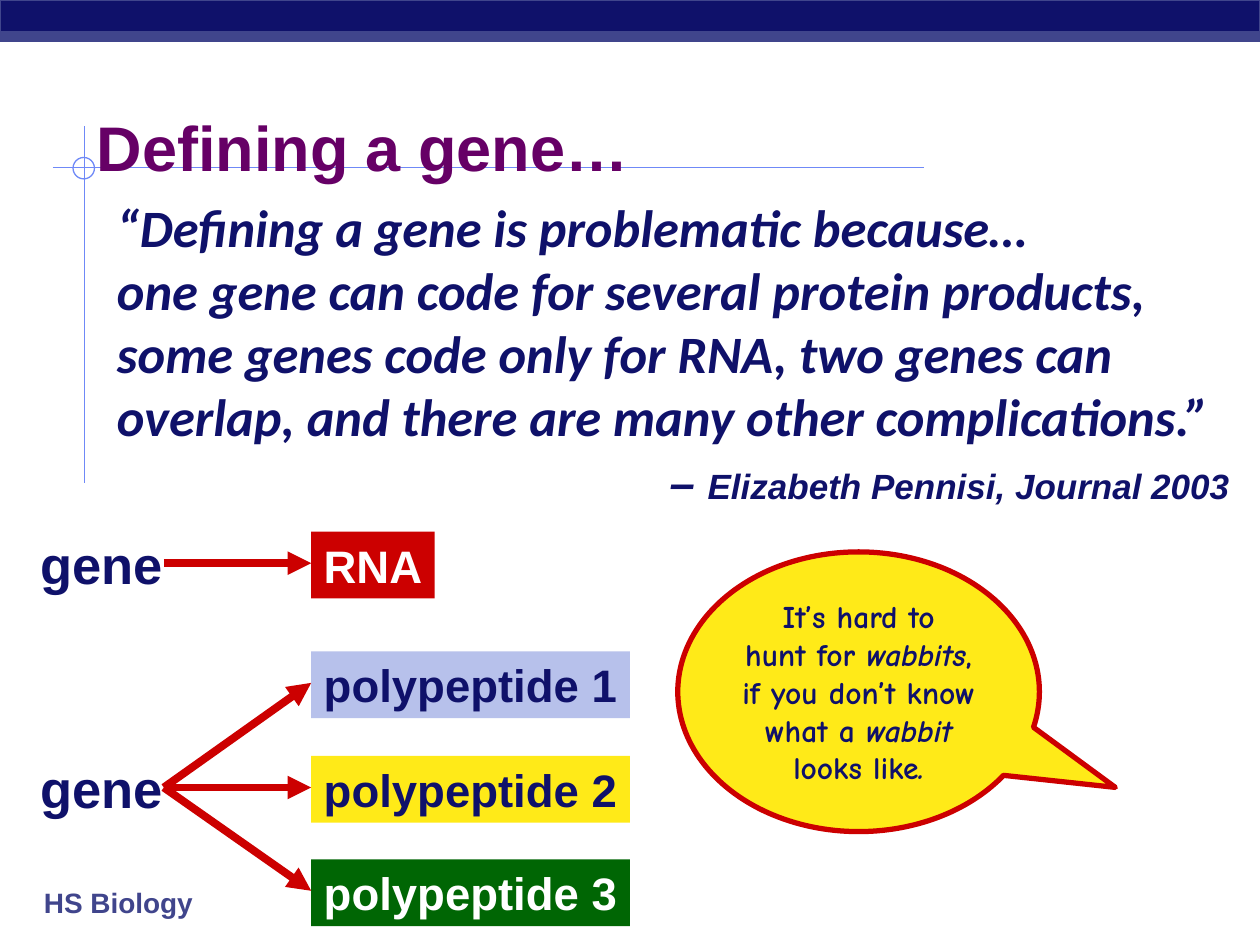
from dataclasses import dataclass
from typing import NamedTuple, Optional

import pptx
import pptx.dml.color
import pptx.enum.shapes
import pptx.enum.text
import pptx.oxml
import pptx.oxml.ns
import pptx.util

Inches = pptx.util.Inches
Pt = pptx.util.Pt
Shape = pptx.enum.shapes.MSO_SHAPE
Anchor = pptx.enum.text.MSO_ANCHOR
Align = pptx.enum.text.PP_ALIGN


@dataclass(frozen=True)
class Theme:
    navy: str = "0F116A"
    slate: str = "40458C"
    guide: str = "6F89F7"
    purple: str = "660066"
    red: str = "CC0000"
    yellow: str = "FFEA18"
    lilac: str = "B7C1EB"
    green: str = "006604"
    white: str = "FFFFFF"
    sans: str = "Arial"
    quote: str = "Calibri"
    comic: str = "Comic Neue"
    title_size: int = 36
    large: int = 30
    label: int = 26
    credit: int = 20
    speech: int = 18
    footer: int = 16


THEME = Theme()


class Area(NamedTuple):
    left: float
    top: float
    width: float
    height: float


class Point(NamedTuple):
    x: float
    y: float


class Style(NamedTuple):
    size: int
    color: str = THEME.navy
    font: str = THEME.sans
    italic: bool = False


class Span(NamedTuple):
    text: str
    style: Style


class Product(NamedTuple):
    name: str
    area: Area
    fill: str
    color: str


def rgb(value: str):
    return pptx.dml.color.RGBColor.from_string(value)


def add_line(page, start: Point, end: Point, color: str, width: float, arrow: bool = False) -> None:
    ends = [Inches(value) for value in (*start, *end)]
    line = page.shapes.add_connector(pptx.enum.shapes.MSO_CONNECTOR.STRAIGHT, *ends)
    line.line.color.rgb = rgb(color)
    line.line.width = Pt(width)
    if arrow:
        tail = pptx.oxml.parse_xml(f'<a:tailEnd {pptx.oxml.ns.nsdecls("a")} type="triangle"/>')
        line.line._get_or_add_ln().append(tail)
    effects = pptx.oxml.parse_xml(f'<a:effectLst {pptx.oxml.ns.nsdecls("a")}/>')
    line._element.spPr.append(effects)


def add_box(page, kind, area: Area, fill: Optional[str] = None,
            outline: Optional[str] = None, width: float = 0.75):
    box = page.shapes.add_shape(kind, *map(Inches, area))
    box.shadow.inherit = False
    if fill:
        box.fill.solid()
        box.fill.fore_color.rgb = rgb(fill)
    else:
        box.fill.background()
    if outline:
        box.line.color.rgb = rgb(outline)
        box.line.width = Pt(width)
    else:
        box.line.fill.background()
    return box


def write(box, lines: list[list[Span]], align=Align.LEFT, anchor=Anchor.MIDDLE, wrap: bool = False) -> None:
    """Write one paragraph for each list of spans."""
    frame = box.text_frame
    frame.word_wrap = wrap
    frame.vertical_anchor = anchor
    for index, spans in enumerate(lines):
        para = frame.add_paragraph() if index else frame.paragraphs[0]
        para.alignment = align
        for span in spans:
            for number, text in enumerate(span.text.split("\n")):
                if number:
                    para.add_line_break()
                if not text:
                    continue
                run = para.add_run()
                run.text = text
                font = run.font
                font.name = span.style.font
                font.size = Pt(span.style.size)
                font.bold = True
                font.italic = span.style.italic
                font.color.rgb = rgb(span.style.color)


def add_text(page, area: Area, text: str, style: Style, align=Align.LEFT, wrap: bool = True) -> None:
    write(page.shapes.add_textbox(*map(Inches, area)), [[Span(text, style)]], align, wrap=wrap)


def draw_frame(page) -> None:
    add_line(page, Point(0.42, 1.33), Point(7.33, 1.33), THEME.guide, 1)
    add_line(page, Point(0.67, 1), Point(0.67, 3.83), THEME.guide, 1)
    add_box(page, Shape.OVAL, Area(0.58, 1.25, 0.17, 0.17), outline=THEME.guide)
    add_box(page, Shape.RECTANGLE, Area(0, 0, 10, 0.33), THEME.navy, THEME.slate)
    add_box(page, Shape.RECTANGLE, Area(0, 0.25, 10, 0.08), THEME.slate, THEME.slate)
    add_text(page, Area(0.25, 6.98, 1.58, 0.37), "HS Biology", Style(THEME.footer, THEME.slate), wrap=False)


def draw_quote(page) -> None:
    box = page.shapes.add_textbox(*map(Inches, Area(0.83, 1.5, 9.03, 2.7)))
    quote = Style(THEME.large, font=THEME.quote, italic=True)
    write(box, [
        [Span("“Defining a gene is problematic because… \n"
              "one gene can code for several protein products, some genes code only for RNA, "
              "two genes can overlap, and there are many other complications.”", quote)],
        [Span("– ", Style(THEME.label, italic=True)),
         Span("Elizabeth Pennisi, Journal 2003", Style(THEME.credit, italic=True))],
    ], anchor=Anchor.TOP, wrap=True)
    credit = box.text_frame.paragraphs[1]
    credit.alignment = Align.RIGHT
    credit.space_before = Pt(4)


def draw_gene(page, middle: float, products: list[Product]) -> None:
    """Draw a gene label with an arrow to each of its products."""
    add_text(page, Area(0.22, middle - 0.3, 1.17, 0.6), "gene", Style(THEME.large), Align.CENTER, wrap=False)
    for product in products:
        area = product.area
        box = add_box(page, Shape.RECTANGLE, area, product.fill)
        write(box, [[Span(product.name, Style(THEME.label, product.color))]], Align.CENTER)
        target = Point(area.left, area.top + 0.25)
        add_line(page, Point(1.3, middle), target, THEME.red, 4.5, arrow=True)


def draw_speech(page) -> None:
    bubble = add_box(page, Shape.OVAL_CALLOUT, Area(5.38, 4.38, 2.87, 2.22), THEME.yellow, THEME.red, 3)
    bubble.adjustments[0] = 0.71
    bubble.adjustments[1] = 0.342
    plain = Style(THEME.speech, font=THEME.comic)
    slanted = plain._replace(italic=True)
    write(bubble, [
        [Span("It’s hard to", plain)],
        [Span("hunt for ", plain), Span("wabbits", slanted), Span(",", plain)],
        [Span("if you don’t know\nwhat a ", plain), Span("wabbit\n", slanted),
         Span("looks like", plain), Span(".", slanted)],
    ], Align.CENTER)
    frame = bubble.text_frame
    frame.margin_left = frame.margin_right = frame.margin_top = frame.margin_bottom = 0


def main() -> None:
    deck = pptx.Presentation()
    deck.slide_width, deck.slide_height = Inches(10), Inches(7.5)
    page = deck.slides.add_slide(deck.slide_layouts[6])
    draw_frame(page)
    add_text(page, Area(0.67, 0.75, 8.5, 0.83), "Defining a gene…", Style(THEME.title_size, THEME.purple))
    draw_quote(page)
    draw_gene(page, 6.25, [
        Product(f"polypeptide {number}", Area(2.47, top, 2.53, 0.53), fill, color)
        for number, (top, fill, color) in enumerate([
            (5.17, THEME.lilac, THEME.navy),
            (6, THEME.yellow, THEME.navy),
            (6.82, THEME.green, THEME.white),
        ], start=1)
    ])
    draw_gene(page, 4.47, [Product("RNA", Area(2.47, 4.22, 0.98, 0.53), THEME.red, THEME.white)])
    draw_speech(page)
    deck.save("out.pptx")


if __name__ == "__main__":
    main()
